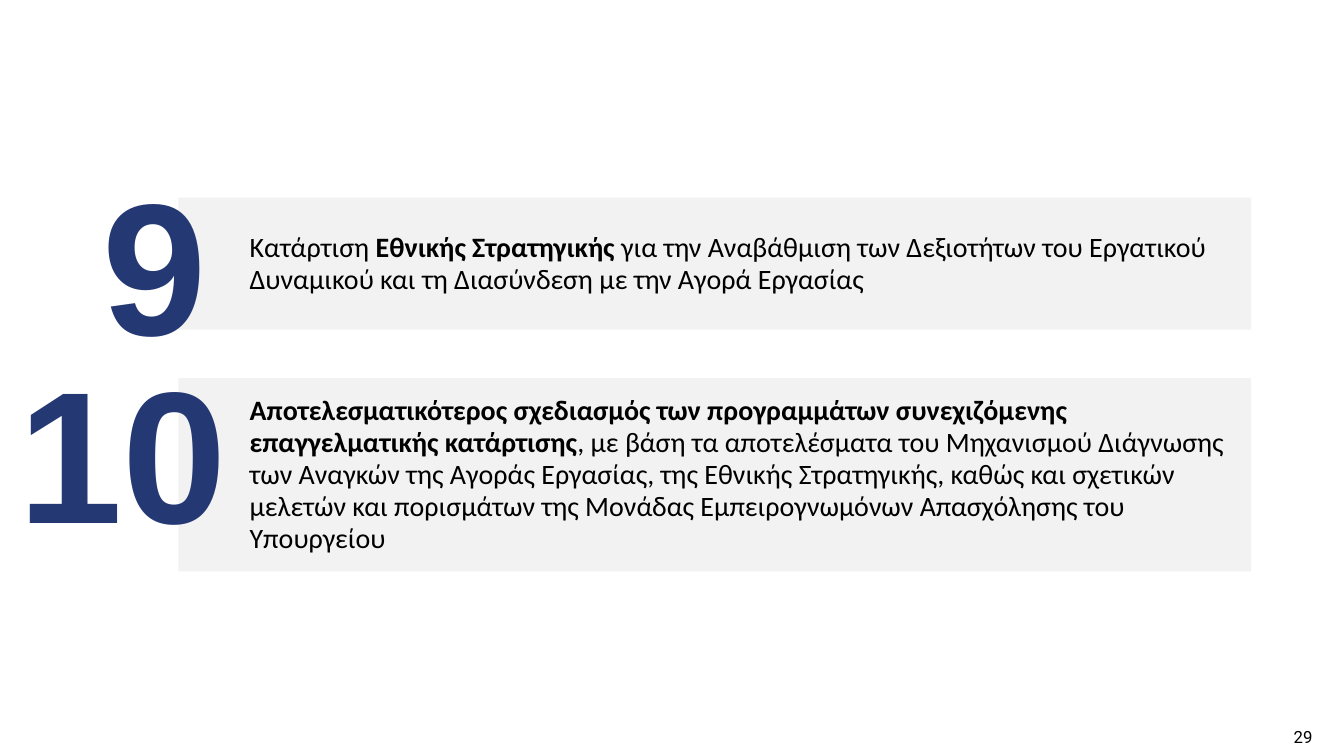
from dataclasses import dataclass

from pptx import Presentation
from pptx.dml.color import RGBColor
from pptx.enum.shapes import MSO_SHAPE
from pptx.enum.text import MSO_ANCHOR, MSO_AUTO_SIZE, PP_ALIGN
from pptx.util import Pt

RECTANGLE = MSO_SHAPE.RECTANGLE
MIDDLE = MSO_ANCHOR.MIDDLE
GROW = MSO_AUTO_SIZE.SHAPE_TO_FIT_TEXT
LEFT, CENTER = PP_ALIGN.LEFT, PP_ALIGN.CENTER


@dataclass(frozen=True)
class Theme:
    panel: RGBColor = RGBColor(0xF2, 0xF2, 0xF2)
    text: RGBColor = RGBColor(0, 0, 0)
    numeral: RGBColor = RGBColor(0x24, 0x38, 0x73)
    body_font: str = "Calibri"
    numeral_font: str = "Arial"
    page_font: str = "Roboto"
    body_size: int = 20
    numeral_size: int = 134
    page_size: int = 12


THEME = Theme()
PANEL_LEFT, PANEL_WIDTH = 127.4, 766.8

# Each action: panel (top, height), numeral, numeral box, text as (words, bold)
ACTIONS = [
    ((141.1, 94.3), "9", (72.7, 128.2, 76.3, 140.4), [
        ("Κατάρτιση ", False),
        ("Εθνικής Στρατηγικής ", True),
        ("για την Αναβάθμιση των Δεξιοτήτων του Εργατικού Δυναμικού "
         "και τη Διασύνδεση με την Αγορά Εργασίας", False),
    ]),
    ((270, 138.2), "10", (8.6, 263.5, 157.7, 138.2), [
        ("Αποτελεσματικότερος σχεδιασμός των προγραμμάτων συνεχιζόμενης "
         "επαγγελματικής κατάρτισης", True),
        (", με βάση τα αποτελέσματα του Μηχανισμού Διάγνωσης των Αναγκών "
         "της Αγοράς Εργασίας, της Εθνικής Στρατηγικής, καθώς και σχετικών "
         "μελετών και πορισμάτων της Μονάδας Εμπειρογνωμόνων Απασχόλησης "
         "του Υπουργείου", False),
    ]),
]


def set_margins(frame, left, top, right, bottom):
    frame.margin_left, frame.margin_top = Pt(left), Pt(top)
    frame.margin_right, frame.margin_bottom = Pt(right), Pt(bottom)


def style_run(run, font_name, size, color, bold=False):
    run.font.name = font_name
    run.font.size = Pt(size)
    run.font.color.rgb = color
    run.font.bold = bold


def add_panel(slide, top, height, passages):
    panel = slide.shapes.add_shape(
        RECTANGLE, Pt(PANEL_LEFT), Pt(top), Pt(PANEL_WIDTH), Pt(height))
    panel.shadow.inherit = False
    panel.fill.solid()
    panel.fill.fore_color.rgb = THEME.panel
    panel.line.fill.background()
    frame = panel.text_frame
    frame.word_wrap = True
    frame.vertical_anchor = MIDDLE
    set_margins(frame, 51, 6, 8.5, 6)
    paragraph = frame.paragraphs[0]
    paragraph.alignment = LEFT
    paragraph.line_spacing = 0.95
    paragraph.space_after = Pt(8)
    for words, bold in passages:
        run = paragraph.add_run()
        run.text = words
        style_run(run, THEME.body_font, THEME.body_size, THEME.text, bold)


def add_numeral(slide, numeral, box):
    frame = slide.shapes.add_textbox(*map(Pt, box)).text_frame
    frame.word_wrap = True
    frame.auto_size = GROW
    frame.vertical_anchor = MIDDLE
    set_margins(frame, 0, 0, 0, 0)
    paragraph = frame.paragraphs[0]
    paragraph.text = numeral
    paragraph.alignment = CENTER
    paragraph.line_spacing = 0.85
    paragraph.space_after = Pt(6)
    style_run(paragraph.runs[0], THEME.numeral_font, THEME.numeral_size,
              THEME.numeral, True)


def add_page_number(slide, number):
    frame = slide.shapes.add_textbox(
        Pt(919.4), Pt(514.8), Pt(23.8), Pt(22.3)).text_frame
    frame.word_wrap = False
    frame.auto_size = GROW
    set_margins(frame, 4.3, 4.3, 4.3, 4.3)
    paragraph = frame.paragraphs[0]
    paragraph.text = number
    paragraph.alignment = CENTER
    style_run(paragraph.runs[0], THEME.page_font, THEME.page_size, THEME.text)


def main():
    presentation = Presentation()
    presentation.slide_width, presentation.slide_height = Pt(960.5), Pt(540)
    blank_layout = presentation.slide_layouts[6]
    slide = presentation.slides.add_slide(blank_layout)
    add_page_number(slide, "29")
    for (top, height), numeral, numeral_box, passages in ACTIONS:
        add_panel(slide, top, height, passages)
        add_numeral(slide, numeral, numeral_box)
    presentation.save("out.pptx")


if __name__ == "__main__":
    main()
